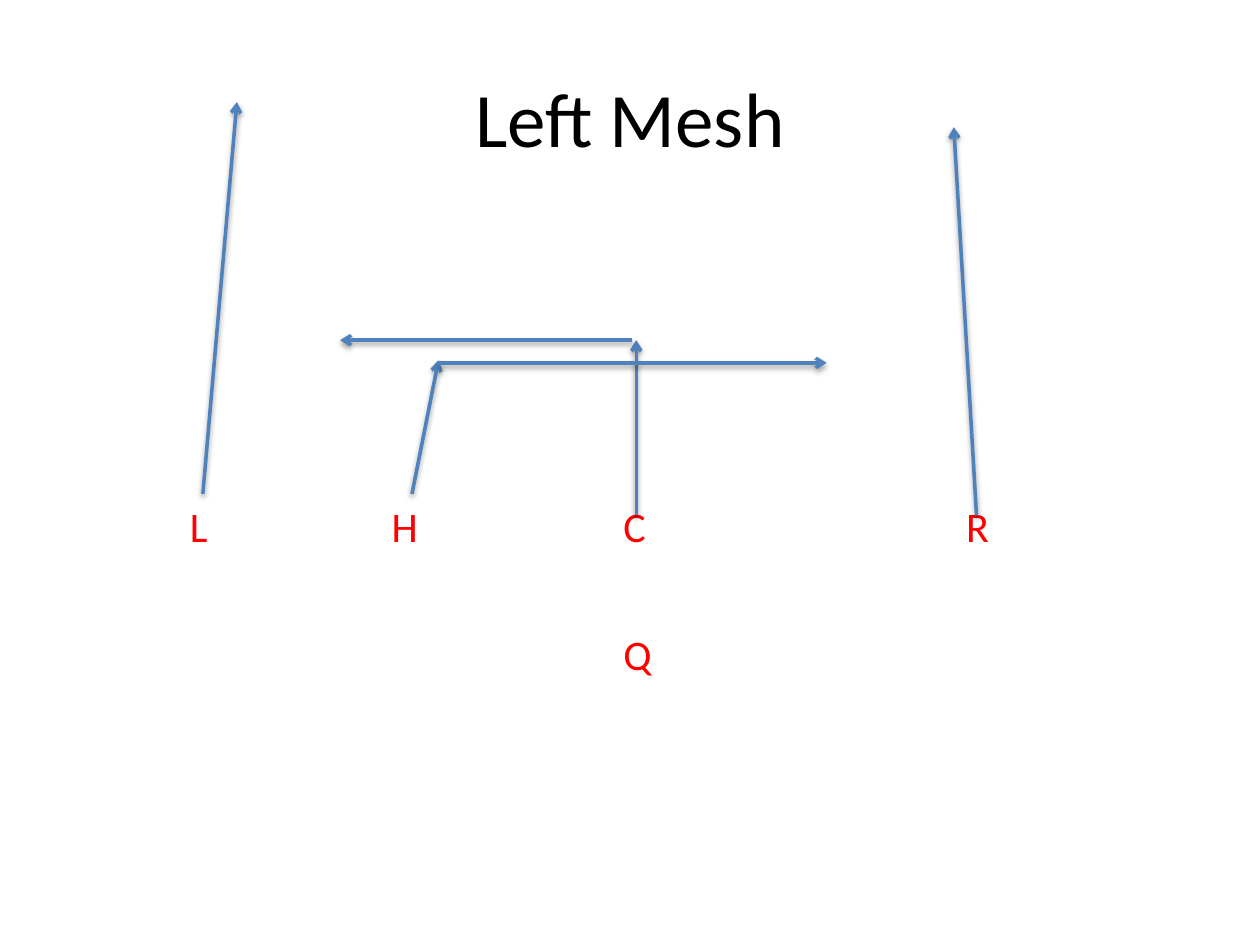
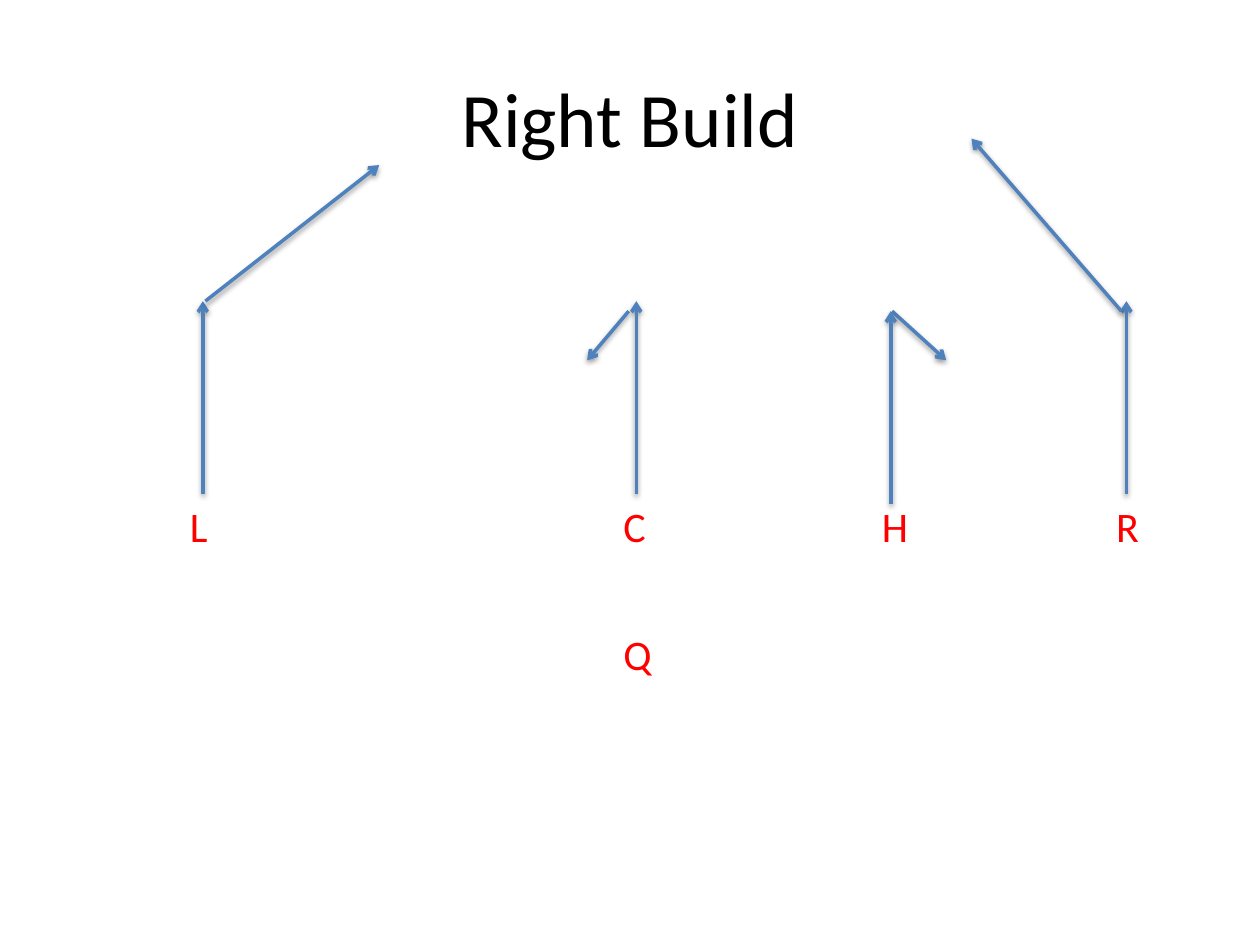
from dataclasses import dataclass

from lxml.etree import SubElement
from pptx import Presentation
from pptx.dml.color import RGBColor
from pptx.enum.shapes import MSO_CONNECTOR
from pptx.enum.text import MSO_ANCHOR, MSO_AUTO_SIZE, PP_ALIGN
from pptx.oxml.ns import qn
from pptx.slide import Slide
from pptx.text.text import TextFrame
from pptx.util import Inches, Pt

# Shared look
COLORS = {"title": "000000", "player": "FF0000", "route": "4F81BD", "shadow": "000000"}
FONT = "Calibri"
TITLE_LAYOUT = 5

# Field geometry, in inches
SCRIMMAGE_TOP = 3.92
QUARTERBACK_TOP = 4.94
LEFT_X, CENTER_X = 1.41, 4.85
LABEL_WIDTH, LABEL_HEIGHT = 0.47, 0.5
STEM_TOP, HOOK_TOP, HOOK_BOTTOM = 2.39, 2.47, 2.86
MESH_HIGH, MESH_LOW = 2.7, 2.88

Point = tuple[float, float]


@dataclass(frozen=True)
class Player:
    letter: str
    left: float
    top: float = SCRIMMAGE_TOP


@dataclass(frozen=True)
class Route:
    start: Point
    end: Point


@dataclass(frozen=True)
class Play:
    name: str
    players: list[Player]
    routes: list[Route]


# Players in the same spot on every play
FIXED_PLAYERS = [
    Player("L", LEFT_X),
    Player("C", CENTER_X),
    Player("Q", CENTER_X, QUARTERBACK_TOP),
]

PLAYS = [
    Play(
        "Left Mesh",
        [*FIXED_PLAYERS, Player("R", 7.57), Player("H", 3.01)],
        [
            Route((1.61, SCRIMMAGE_TOP), (1.88, 0.81)),
            Route((5.05, 4.09), (5.05, MESH_HIGH)),
            Route((3.27, SCRIMMAGE_TOP), (3.48, 2.86)),
            Route((7.75, 4.09), (7.57, 1.01)),
            Route((3.48, MESH_LOW), (6.56, MESH_LOW)),
            Route((5.02, MESH_HIGH), (2.7, MESH_HIGH)),
        ],
    ),
    Play(
        "Right Build",
        [*FIXED_PLAYERS, Player("R", 8.76), Player("H", 6.9)],
        [
            *(Route((x, SCRIMMAGE_TOP), (x, STEM_TOP)) for x in (1.61, 8.94, 5.05)),
            Route((1.63, STEM_TOP), (3.01, 1.31)),
            Route((7.08, HOOK_TOP), (7.51, HOOK_BOTTOM)),
            Route((8.9, HOOK_TOP), (7.71, 1.1)),
            Route((7.07, 4), (7.07, HOOK_TOP)),
            Route((4.99, HOOK_TOP), (4.66, HOOK_BOTTOM)),
        ],
    ),
]


def write_text(frame: TextFrame, text: str, *, size: float, color: str,
               align: PP_ALIGN = PP_ALIGN.LEFT,
               anchor: MSO_ANCHOR = MSO_ANCHOR.TOP) -> None:
    frame.word_wrap = True
    frame.vertical_anchor = anchor
    paragraph = frame.paragraphs[0]
    paragraph.alignment = align
    run = paragraph.add_run()
    run.text = text
    run.font.name = FONT
    run.font.size = Pt(size)
    run.font.color.rgb = RGBColor.from_string(COLORS[color])


def draw_title(slide: Slide, name: str) -> None:
    title = slide.shapes.title
    title.left, title.top = Inches(0.5), Inches(0.3)
    title.width, title.height = Inches(9), Inches(1.25)
    write_text(title.text_frame, name, size=44, color="title",
               align=PP_ALIGN.CENTER, anchor=MSO_ANCHOR.MIDDLE)


def draw_player(slide: Slide, player: Player) -> None:
    label = slide.shapes.add_textbox(Inches(player.left), Inches(player.top),
                                     Inches(LABEL_WIDTH), Inches(LABEL_HEIGHT))
    write_text(label.text_frame, player.letter, size=24, color="player")
    label.text_frame.auto_size = MSO_AUTO_SIZE.SHAPE_TO_FIT_TEXT


def draw_route(slide: Slide, route: Route) -> None:
    arrow = slide.shapes.add_connector(
        MSO_CONNECTOR.STRAIGHT, *map(Inches, (*route.start, *route.end)))
    arrow.line.width = Pt(2)
    arrow.line.color.rgb = RGBColor.from_string(COLORS["route"])
    properties = arrow.element.spPr
    # Arrowhead at the end of the route
    SubElement(properties.find(qn("a:ln")), qn("a:tailEnd"), type="arrow")
    # Soft shadow straight below the line
    effects = SubElement(properties, qn("a:effectLst"))
    shadow = SubElement(effects, qn("a:outerShdw"), blurRad=str(Pt(3.1)),
                        dist=str(Pt(1.6)), dir="5400000", rotWithShape="0")
    shade = SubElement(shadow, qn("a:srgbClr"), val=COLORS["shadow"])
    SubElement(shade, qn("a:alpha"), val="38000")


def main() -> None:
    playbook = Presentation()
    playbook.slide_width, playbook.slide_height = Inches(10), Inches(7.5)
    for play in PLAYS:
        slide = playbook.slides.add_slide(playbook.slide_layouts[TITLE_LAYOUT])
        draw_title(slide, play.name)
        for player in play.players:
            draw_player(slide, player)
        for route in play.routes:
            draw_route(slide, route)
    playbook.save("out.pptx")


if __name__ == "__main__":
    main()
